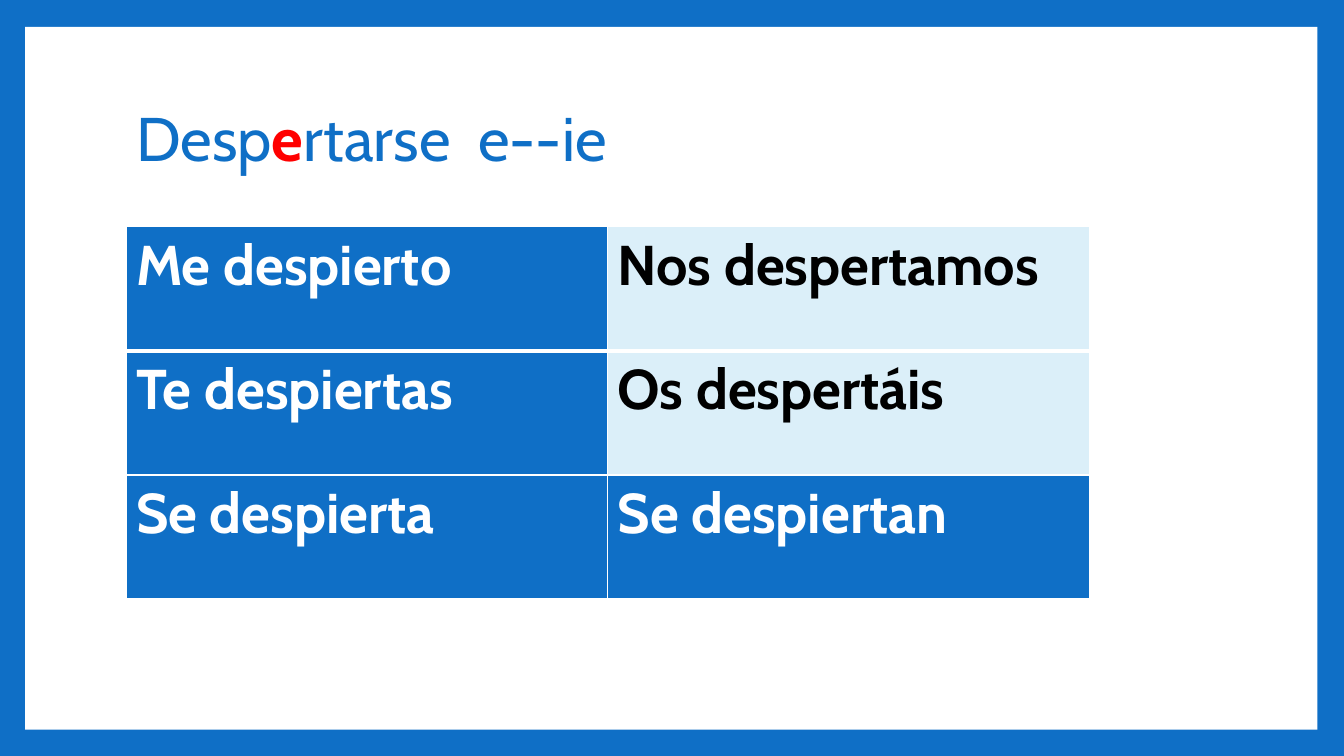
from lxml import etree
from pptx import Presentation
from pptx import util as u
from pptx.dml.color import RGBColor
from pptx.enum import shapes, text
from pptx.oxml.ns import qn

COLORS = {"blue": "0F6FC6", "pale": "DBEFF9", "white": "FFFFFF",
          "black": "000000", "red": "FF0000"}
FONT = "Cabin"


def rgb(name):
    return RGBColor.from_string(COLORS[name])


def add_run(p, content, size=40, color="black", bold=False):
    r = p.add_run()
    r.text = content
    r.font.name = FONT
    r.font.size = u.Pt(size)
    r.font.bold = bold
    r.font.color.rgb = rgb(color)


class SlideBuilder:
    def __init__(self, prs, background):
        self.s = prs.slides.add_slide(prs.slide_layouts[5])
        fill = self.s.background.fill
        fill.solid()
        fill.fore_color.rgb = rgb(background)

    def panel(self, x, y, w, h, color):
        sp = self.s.shapes.add_shape(shapes.MSO_SHAPE.RECTANGLE,
                                     u.Pt(x), u.Pt(y), u.Pt(w), u.Pt(h))
        sp.shadow.inherit = False
        sp.fill.solid()
        sp.fill.fore_color.rgb = rgb(color)
        sp.line.fill.background()

    def title(self, x, y, w, h, runs):
        sp = self.s.shapes.title
        sp.left, sp.top, sp.width, sp.height = (u.Pt(v) for v in (x, y, w, h))
        # Bring the title in front of the panel
        self.s.shapes._spTree.append(sp._element)
        tf = sp.text_frame
        tf.word_wrap = True
        tf.vertical_anchor = text.MSO_ANCHOR.MIDDLE
        p = tf.paragraphs[0]
        p.alignment = text.PP_ALIGN.LEFT
        p.line_spacing = 0.9
        for content, style in runs:
            add_run(p, content, size=44, **style)

    def borders(self, cell, widths):
        tc_pr = cell._tc.get_or_add_tcPr()
        for i, (side, width) in enumerate(widths.items()):
            ln = etree.Element(qn("a:ln" + side), w=str(u.Pt(width)))
            fill = etree.SubElement(ln, qn("a:solidFill"))
            etree.SubElement(fill, qn("a:srgbClr"), val=COLORS["white"])
            tc_pr.insert(i, ln)

    def table(self, x, y, w, h, rows):
        tbl = self.s.shapes.add_table(len(rows), len(rows[0]), u.Pt(x),
                                      u.Pt(y), u.Pt(w), u.Pt(h)).table
        tbl.first_row = tbl.horz_banding = False
        for i, row in enumerate(rows):
            for j, (content, fill, color) in enumerate(row):
                cell = tbl.cell(i, j)
                cell.fill.solid()
                cell.fill.fore_color.rgb = rgb(fill)
                add_run(cell.text_frame.paragraphs[0], content,
                        color=color, bold=True)
                # Heavier rule under the first row
                self.borders(cell, {"L": 1, "R": 1, "T": 3 if i == 1 else 1,
                                    "B": 3 if i == 0 else 1})


def main():
    prs = Presentation()
    prs.slide_width, prs.slide_height = u.Pt(960), u.Pt(540)
    slide = SlideBuilder(prs, "blue")

    # White panel inside the blue frame
    slide.panel(18, 19.2, 923, 502, "white")

    # Verb and its stem change
    slide.title(90, 48, 778, 106.5, [
        ("Desp", {"color": "blue"}),
        ("e", {"color": "red", "bold": True}),
        ("rtarse  e--ie", {"color": "blue"}),
    ])

    # Conjugation: stem-changing forms in blue, regular ones pale
    changed, regular = ("blue", "white"), ("pale", "black")
    slide.table(90, 162, 688, 266, [
        [("Me despierto", *changed), ("Nos despertamos", *regular)],
        [("Te despiertas", *changed), ("Os despertáis", *regular)],
        [("Se despierta", *changed), ("Se despiertan", *changed)],
    ])
    prs.save("out.pptx")


if __name__ == "__main__":
    main()
